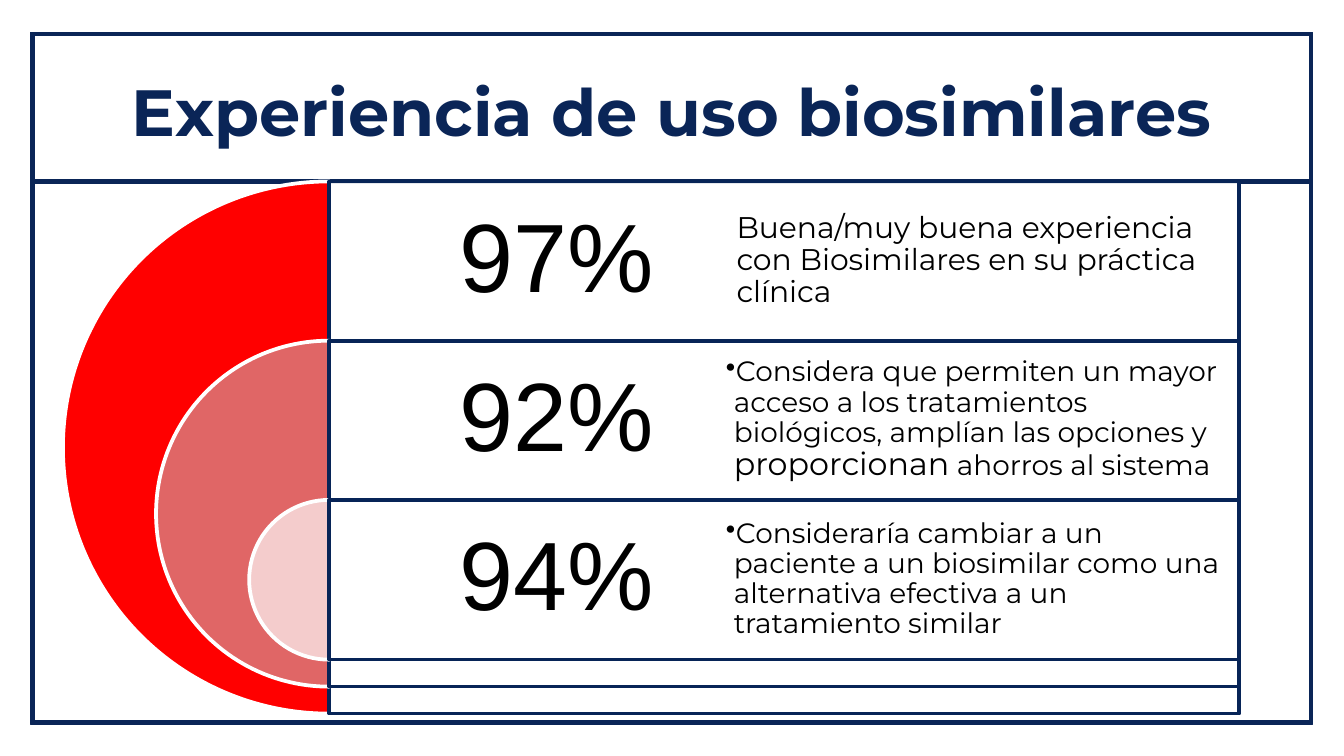
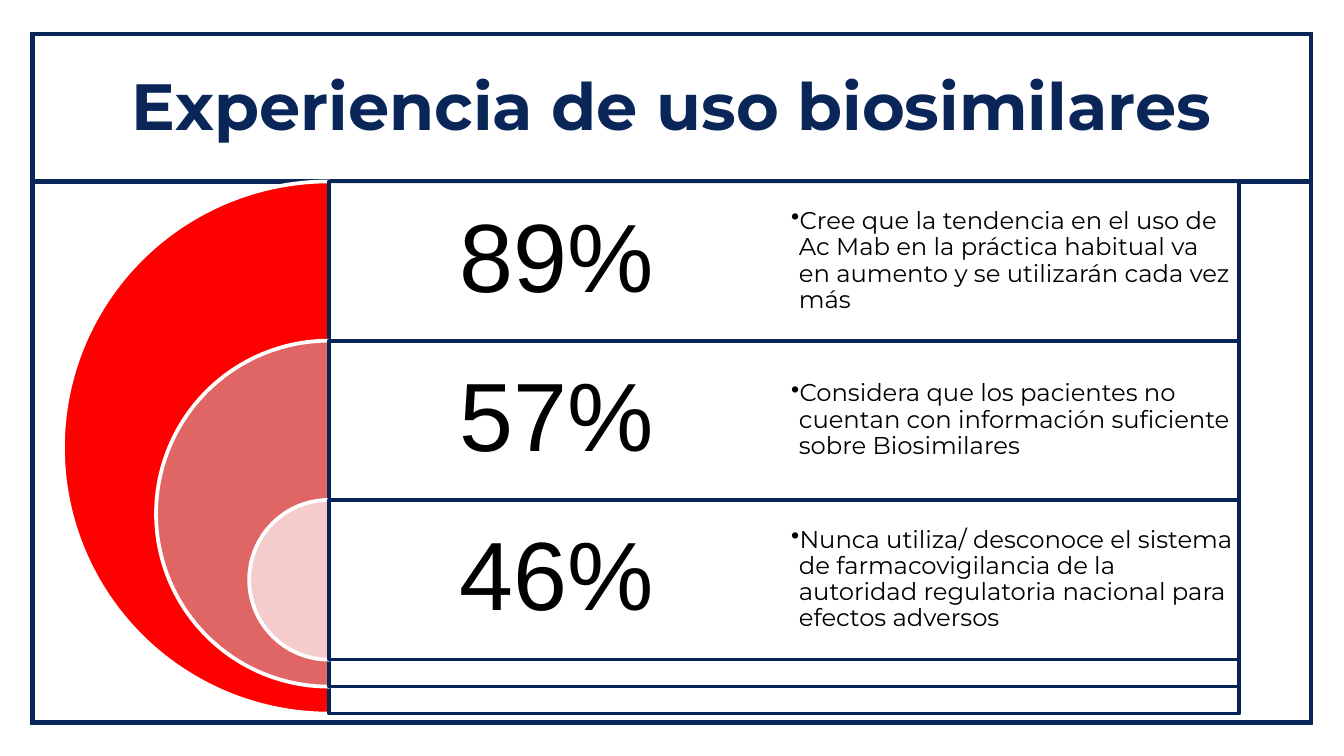
from dataclasses import dataclass

from lxml.etree import SubElement
from pptx import Presentation
from pptx.dml.color import RGBColor
from pptx.enum.shapes import MSO_CONNECTOR as Connector, MSO_SHAPE as Shape
from pptx.enum.text import MSO_ANCHOR as Anchor, PP_ALIGN as Align
from pptx.oxml.ns import qn
from pptx.util import Cm, Pt

TITLE = "Experiencia de uso biosimilares"

# Each finding: percentage, text box width (cm), bulleted, [(text, size in points)]
SLIDES = [
    {
        "title_top": 1.09,
        "findings": [
            ("97%", 9.63, False, [
                ("Buena/muy buena experiencia con Biosimilares en su práctica clínica", 16)]),
            ("92%", 9.83, True, [
                ("Considera que permiten un mayor acceso a los tratamientos biológicos, "
                 "amplían las opciones y ", 15),
                ("proporcionan", 17),
                (" ahorros al sistema", 15)]),
            ("94%", 9.83, True, [
                ("Consideraría cambiar a un paciente a un biosimilar como una alternativa "
                 "efectiva a un tratamiento similar", 15)]),
        ],
    },
    {
        "title_top": 0.99,
        "findings": [
            ("89%", 8.6, True, [
                ("Cree que la tendencia en el uso de Ac Mab en la práctica habitual va en "
                 "aumento y se utilizarán cada vez más", 13)]),
            ("57%", 8.6, True, [
                ("Considera que los pacientes no cuentan con información suficiente sobre "
                 "Biosimilares", 13)]),
            ("46%", 8.6, True, [
                ("Nunca utiliza/ desconoce el sistema de farmacovigilancia de la autoridad "
                 "regulatoria nacional para efectos adversos", 13)]),
        ],
    },
]


@dataclass(frozen=True)
class Theme:
    navy: str = "0A2557"
    panel_line: str = "072457"
    white: str = "FFFFFF"
    black: str = "000000"
    pies: tuple = ("FF0000", "E06666", "F4CCCC")
    text_font: str = "Montserrat"
    number_font: str = "Arial"
    title_size: int = 35
    number_size: int = 52
    panel_opacity: int = 89


THEME = Theme()

# Lengths in centimetres
PAGE_WIDTH, PAGE_HEIGHT = 25.4, 14.29
FRAME_LEFT, FRAME_TOP, FRAME_WIDTH, FRAME_HEIGHT = 0.58, 0.61, 24.23, 13.08
BODY_TOP = 3.43
AXIS = 6.22
PANEL_WIDTH = 17.2
ROW_HEIGHT = 3.01
LARGEST_PIE, PIE_STEP = 10.06, 3.52
BULLET_MARGIN, BULLET_INDENT = 0.15, -0.24


def color(value):
    return RGBColor.from_string(value)


def add_figure(shapes, kind, place, fill, line, weight, adjustments=()):
    figure = shapes.add_shape(kind, *map(Cm, place))
    figure.shadow.inherit = False
    figure.fill.solid()
    figure.fill.fore_color.rgb = color(fill)
    figure.line.color.rgb = color(line)
    figure.line.width = Pt(weight)
    for index, value in enumerate(adjustments):
        figure.adjustments[index] = value
    return figure


def add_text(shapes, place, spans, font, ink, inset, align=Align.LEFT,
             anchor=Anchor.MIDDLE, spacing=0.9, bold=False):
    """Add a one-paragraph text box from (text, size) spans; return the paragraph."""
    box = shapes.add_textbox(*map(Cm, place))
    frame = box.text_frame
    frame.word_wrap = True
    frame.vertical_anchor = anchor
    frame.margin_left = frame.margin_right = Cm(inset)
    frame.margin_top = frame.margin_bottom = Cm(inset)
    para = frame.paragraphs[0]
    para.alignment = align
    para.line_spacing = spacing
    for text, size in spans:
        span = para.add_run()
        span.text = text
        span.font.name = font
        span.font.size = Pt(size)
        span.font.bold = bold
        span.font.color.rgb = color(ink)
    return para


def add_bullet(para):
    para.level = 1
    props = para._p.get_or_add_pPr()
    props.set("marL", str(Cm(BULLET_MARGIN)))
    props.set("indent", str(Cm(BULLET_INDENT)))
    SubElement(SubElement(props, qn("a:buClr")), qn("a:srgbClr"), val=THEME.black)
    SubElement(props, qn("a:buChar"), char="•")


def set_opacity(figure, percent):
    tint = figure.fill._xPr.find(".//" + qn("a:srgbClr"))
    SubElement(tint, qn("a:alpha"), val=str(percent * 1000))


def add_header(page, title_top):
    """Draw the page frame, the rule under the title and the title."""
    add_figure(page.shapes, Shape.FRAME,
               (FRAME_LEFT, FRAME_TOP, FRAME_WIDTH, FRAME_HEIGHT),
               THEME.navy, THEME.navy, 0.75, (0.005,))
    rule = page.shapes.add_connector(
        Connector.STRAIGHT, Cm(FRAME_LEFT), Cm(BODY_TOP),
        Cm(FRAME_LEFT + FRAME_WIDTH), Cm(BODY_TOP))
    rule.line.color.rgb = color(THEME.navy)
    rule.line.width = Pt(2.25)
    SubElement(rule._element.spPr, qn("a:effectLst"))
    add_text(page.shapes, (1.98, title_top, 21.44, 1.6), [(TITLE, THEME.title_size)],
             THEME.text_font, THEME.navy, 0.25, Align.CENTER, Anchor.TOP, 1.0, True)


def add_findings(page, findings):
    """Nest one half disc and one panel per finding, then add the descriptions."""
    shapes = page.shapes.add_group_shape().shapes
    tops = [BODY_TOP + row * ROW_HEIGHT for row in range(len(findings))]
    for row, (top, finding) in enumerate(zip(tops, findings)):
        diameter = LARGEST_PIE - row * PIE_STEP
        add_figure(shapes, Shape.PIE, (AXIS - diameter / 2, top, diameter, diameter),
                   THEME.pies[row], THEME.white, 2, (54, 162))
        panel = add_figure(shapes, Shape.RECTANGLE, (AXIS, top, PANEL_WIDTH, diameter),
                           THEME.white, THEME.panel_line, 2)
        set_opacity(panel, THEME.panel_opacity)
        add_text(shapes, (AXIS, top, PANEL_WIDTH / 2, ROW_HEIGHT),
                 [(finding[0], THEME.number_size)],
                 THEME.number_font, THEME.black, 0.56, Align.CENTER)
    for top, (_, width, bulleted, spans) in zip(tops, findings):
        para = add_text(shapes, (AXIS + PANEL_WIDTH - width, top, width, ROW_HEIGHT),
                        spans, THEME.text_font, THEME.black, 0.13)
        if bulleted:
            add_bullet(para)


def main():
    deck = Presentation()
    deck.slide_width, deck.slide_height = Cm(PAGE_WIDTH), Cm(PAGE_HEIGHT)
    for content in SLIDES:
        page = deck.slides.add_slide(deck.slide_layouts[6])
        add_header(page, content["title_top"])
        add_findings(page, content["findings"])
    deck.save("out.pptx")


if __name__ == "__main__":
    main()
